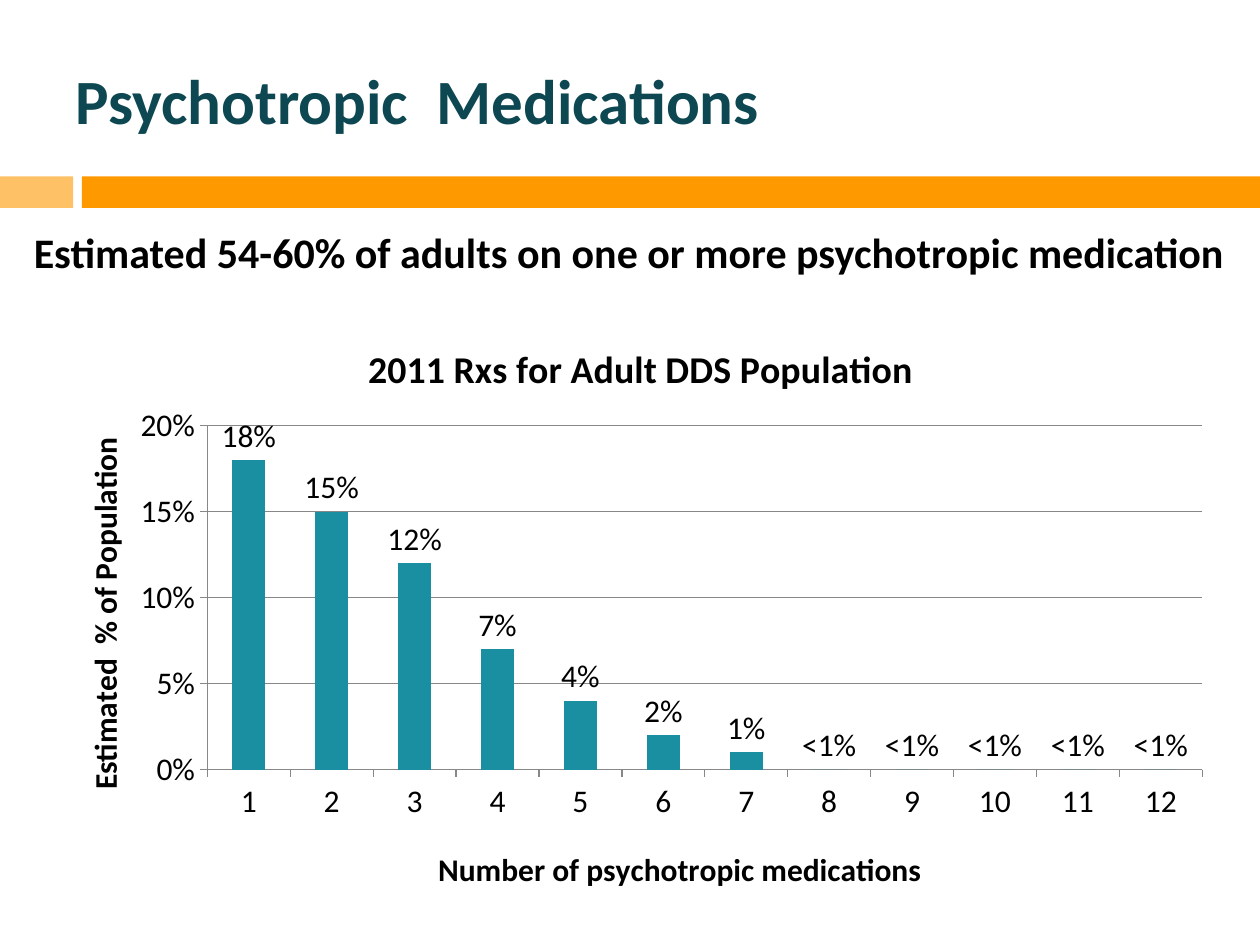
"""Build the slide on psychotropic medications among adults."""
from lxml import etree
from pptx import Presentation
from pptx.chart.data import CategoryChartData
from pptx.dml.color import RGBColor
from pptx.enum import chart as ch, shapes, text
from pptx.oxml import ns
from pptx.util import Inches, Pt

ORANGE = RGBColor(0xFF, 0x99, 0x00)
LIGHT_ORANGE = RGBColor(0xFF, 0xC1, 0x65)
DARK_TEAL = RGBColor(0x0D, 0x47, 0x51)
TEAL = RGBColor(0x1A, 0x8F, 0xA2)
BLACK = RGBColor(0, 0, 0)
GRAY = RGBColor(0x87, 0x87, 0x87)
SHARES = [0.18, 0.15, 0.12, 0.07, 0.04, 0.02, 0.01, 0, 0, 0, 0, 0]


def place(element, index, **fractions):
    """Give a chart part a manual layout in fractions of the chart."""
    for old in element.findall(ns.qn("c:layout")):
        element.remove(old)
    layout = etree.Element(ns.qn("c:layout"))
    manual = etree.SubElement(layout, ns.qn("c:manualLayout"))
    settings = {"xMode": "edge", "yMode": "edge", **fractions}
    if "w" in fractions:
        settings = {"layoutTarget": "inner", **settings}
    for name, value in settings.items():
        etree.SubElement(manual, ns.qn("c:" + name)).set("val", str(value))
    element.insert(index, layout)


class Deck:
    """Hold the style and the current slide."""

    font = "Calibri"

    def __init__(self, prs):
        """Start a slide with a title placeholder."""
        self.s = prs.slides.add_slide(prs.slide_layouts[5])

    def style(self, font, size, color=BLACK, bold=False):
        """Apply the deck's typeface with a size, colour and weight."""
        font.name, font.size, font.bold = self.font, Pt(size), bold
        font.color.rgb = color

    def bar(self, left, width, color):
        """Add one block of the divider band."""
        sp = self.s.shapes.add_shape(shapes.MSO_SHAPE.RECTANGLE, Inches(left),
                                     Inches(1.4), Inches(width), Inches(0.25))
        sp.shadow.inherit = False
        sp.fill.solid()
        sp.fill.fore_color.rgb = color
        sp.line.fill.background()

    def title(self, words):
        """Fill the title placeholder."""
        sp = self.s.shapes.title
        sp.left, sp.top = Inches(0.5), Inches(0.25)
        sp.width, sp.height = Inches(9.09), Inches(1.08)
        tf = sp.text_frame
        tf.text = words
        tf.vertical_anchor = text.MSO_ANCHOR.MIDDLE
        p = tf.paragraphs[0]
        p.alignment = text.PP_ALIGN.LEFT
        self.style(p.font, 36, DARK_TEAL, True)

    def statement(self, words):
        """Add the key statement under the band."""
        sp = self.s.shapes.add_textbox(Inches(0.17), Inches(1.75), Inches(10), Inches(0.67))
        tf = sp.text_frame
        tf.word_wrap = True
        p = tf.paragraphs[0]
        p.text = words
        p.space_before = Pt(4.8)
        self.style(p.font, 24, bold=True)

    def caption(self, owner, words, size, x, y):
        """Write and place the title of a chart or an axis."""
        owner.has_title = True
        title = owner.chart_title if hasattr(owner, "chart_title") else owner.axis_title
        tf = title.text_frame
        tf.text = words
        self.style(tf.paragraphs[0].font, size, bold=True)
        place(tf._txBody.getparent().getparent(), 1, x=x, y=y)

    def column_chart(self, heading, x_title, y_title, values):
        """Add the column chart of population shares."""
        data = CategoryChartData(number_format="0%")
        data.categories = [str(n + 1) for n in range(len(values))]
        data.add_series("Series 1", values)
        chart = self.s.shapes.add_chart(ch.XL_CHART_TYPE.COLUMN_CLUSTERED, Inches(0.33),
                                        Inches(2.42), Inches(9.4), Inches(4.79), data).chart
        self.style(chart.font, 18)
        chart.has_legend = False
        x_axis, y_axis = chart.category_axis, chart.value_axis
        self.caption(chart, heading, 21.6, 0.27, 0.05)
        self.caption(x_axis, x_title, 18, 0.33, 0.89)
        self.caption(y_axis, y_title, 18, 0.03, 0.21)
        for axis in (x_axis, y_axis):
            axis.major_tick_mark = ch.XL_TICK_MARK.OUTSIDE
            axis.format.line.color.rgb = GRAY
        y_axis.minimum_scale, y_axis.maximum_scale, y_axis.major_unit = 0, 0.2, 0.05
        y_axis.major_gridlines.format.line.color.rgb = GRAY
        y_axis.tick_labels.number_format = "0%"
        y_axis.tick_labels.number_format_is_linked = False
        plot = chart.plots[0]
        plot.gap_width, plot.vary_by_categories = 150, False
        series = plot.series[0]
        series.format.fill.solid()
        series.format.fill.fore_color.rgb = TEAL
        labels = series.data_labels
        labels.show_value = True
        labels.number_format, labels.number_format_is_linked = "0%", False
        labels.position = ch.XL_LABEL_POSITION.OUTSIDE_END
        self.style(labels.font, 18)
        for i, value in enumerate(values):
            if value == 0:
                label = series.points[i].data_label
                label.text_frame.text = "<1%"
                self.style(label.text_frame.paragraphs[0].font, 18)
                label.position = ch.XL_LABEL_POSITION.OUTSIDE_END
        place(chart._chartSpace.chart.plotArea, 0, x=0.14, y=0.2, w=0.84, h=0.57)


def main():
    """Assemble and save the slide."""
    prs = Presentation()
    prs.slide_width, prs.slide_height = Inches(10), Inches(7.5)
    deck = Deck(prs)
    deck.bar(0, 0.58, LIGHT_ORANGE)
    deck.bar(0.65, 9.35, ORANGE)
    deck.title("Psychotropic  Medications")
    deck.statement("Estimated 54-60% of adults on one or more psychotropic medication")
    deck.column_chart("2011 Rxs for Adult DDS Population",
                      "Number of psychotropic medications",
                      "Estimated  % of Population", SHARES)
    prs.save("out.pptx")


if __name__ == "__main__":
    main()
